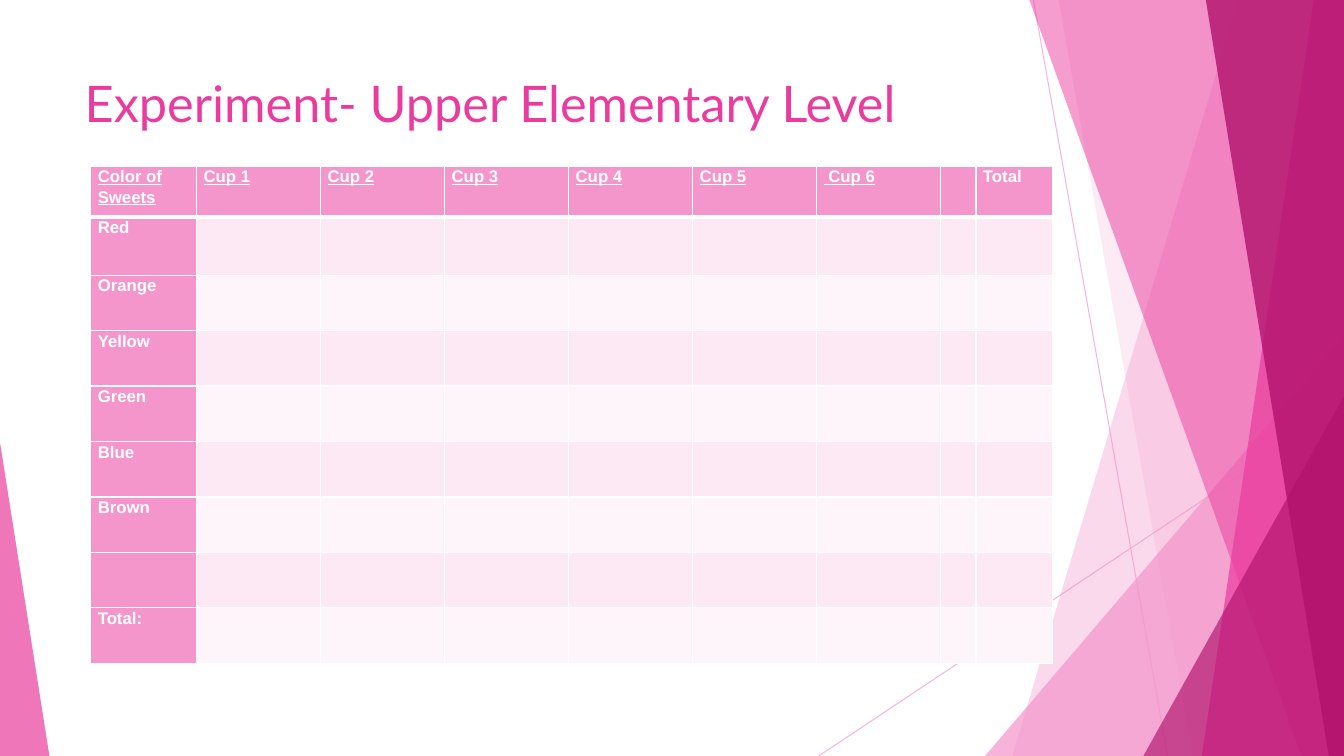
import lxml.etree
import pptx
import pptx.dml.color
import pptx.enum.shapes
import pptx.enum.text
import pptx.oxml.ns
import pptx.util

RGBColor = pptx.dml.color.RGBColor
WHITE = RGBColor(0xFF, 0xFF, 0xFF)
LIGHT_PINK = RGBColor(0xF4, 0x96, 0xCB)
PINK = RGBColor(0xEA, 0x3C, 0x9E)
MAGENTA = RGBColor(0xB2, 0x12, 0x6C)
BANDS = (RGBColor(0xFC, 0xE9, 0xF4), RGBColor(0xFE, 0xF5, 0xFA))

GRID_COLUMNS, GRID_ROWS = 13.33, 7.5

HEADINGS = ["Color of Sweets", "Cup 1", "Cup 2", "Cup 3", "Cup 4", "Cup 5", " Cup 6", "", "Total"]
COLORS = ["Red", "Orange", "Yellow", "Green", "Blue", "Brown", "", "Total:"]
COLUMN_WIDTHS = [1.05] + [1.23] * 6 + [0.35, 0.76]
ROW_HEIGHTS = [0.5, 0.58] + [0.55] * 7


def child(parent, tag, **attributes):
    return lxml.etree.SubElement(parent, pptx.oxml.ns.qn(tag), attributes)


def set_format(target, values):
    for name, value in values.items():
        setattr(target, name, value)


class SlideBuilder:
    """Draws styled elements on one slide, measured in grid columns and rows."""

    def __init__(self, presentation):
        self.column = presentation.slide_width / GRID_COLUMNS
        self.row = presentation.slide_height / GRID_ROWS
        self.slide = presentation.slides.add_slide(presentation.slide_layouts[5])
        self.shapes = self.slide.shapes
        self.title_font = {"name": "Lato", "size": pptx.util.Pt(36), "bold": False}
        self.cell_font = {"name": "Arial", "size": pptx.util.Pt(12), "bold": True}
        self.cell_format = {
            "margin_left": self.x(0.07), "margin_right": self.x(0.07),
            "margin_top": 0, "margin_bottom": 0,
            "vertical_anchor": pptx.enum.text.MSO_ANCHOR.TOP,
        }

    def x(self, columns):
        return round(columns * self.column)

    def y(self, rows):
        return round(rows * self.row)

    def box(self, left, top, width, height):
        return self.x(left), self.y(top), self.x(width), self.y(height)

    def set_opacity(self, shape, percent):
        for color in shape._element.spPr.iter(pptx.oxml.ns.qn("a:srgbClr")):
            child(color, "a:alpha", val=str(percent * 1000))

    def paint(self, shape, color, opacity):
        shape.shadow.inherit = False
        shape.fill.solid()
        shape.fill.fore_color.rgb = color
        shape.line.fill.background()
        self.set_opacity(shape, opacity)

    def line(self, start, end):
        connector = self.shapes.add_connector(
            pptx.enum.shapes.MSO_CONNECTOR.STRAIGHT,
            self.x(start[0]), self.y(start[1]), self.x(end[0]), self.y(end[1]))
        connector.line.color.rgb = LIGHT_PINK
        connector.line.width = pptx.util.Pt(0.75)
        self.set_opacity(connector, 70)
        child(connector._element.spPr, "a:effectLst")

    def edge_band(self, top_left, top_right, bottom_left, color, opacity):
        corners = [(top_left, 0), (top_right, 0), (GRID_COLUMNS, GRID_ROWS), (bottom_left, GRID_ROWS)]
        if top_right < GRID_COLUMNS:
            corners.insert(2, (GRID_COLUMNS, 0))
        points = [(self.x(column), self.y(row)) for column, row in corners]
        builder = self.shapes.build_freeform(*points[0])
        builder.add_line_segments(points[1:], close=True)
        self.paint(builder.convert_to_shape(), color, opacity)

    def corner_triangle(self, left, top, width, apex, color, opacity):
        shape = self.shapes.add_shape(
            pptx.enum.shapes.MSO_SHAPE.ISOSCELES_TRIANGLE,
            *self.box(left, top, width, GRID_ROWS - top))
        shape.adjustments[0] = apex
        self.paint(shape, color, opacity)

    def title(self, text, left, top, width, height):
        title = self.shapes.title
        position = self.box(left, top, width, height)
        set_format(title, dict(zip(("left", "top", "width", "height"), position)))
        set_format(title.text_frame, {
            "text": text, "word_wrap": True,
            "vertical_anchor": pptx.enum.text.MSO_ANCHOR.TOP,
            "auto_size": pptx.enum.text.MSO_AUTO_SIZE.NONE,
        })
        paragraph = title.text_frame.paragraphs[0]
        paragraph.alignment = pptx.enum.text.PP_ALIGN.LEFT
        set_format(paragraph.runs[0].font, self.title_font)
        paragraph.runs[0].font.color.rgb = PINK

    def border(self, cell, side, points):
        properties = cell._tc.get_or_add_tcPr()
        line = child(properties, f"a:ln{side}", w=str(pptx.util.Pt(points)))
        child(child(line, "a:solidFill"), "a:srgbClr", val=str(WHITE))

    def cell(self, cell, text, color, top, bottom, underline):
        for side, points in (("L", 1), ("R", 1), ("T", top), ("B", bottom)):
            self.border(cell, side, points)
        cell.fill.solid()
        cell.fill.fore_color.rgb = color
        set_format(cell, self.cell_format)
        paragraph = cell.text_frame.paragraphs[0]
        paragraph.line_spacing = 1.07
        set_format(paragraph.font, self.cell_font)
        if text:
            run = paragraph.add_run()
            run.text = text
            set_format(run.font, {**self.cell_font, "underline": underline})
            run.font.color.rgb = WHITE

    def table(self, left, top):
        frame = self.shapes.add_table(
            len(ROW_HEIGHTS), len(COLUMN_WIDTHS),
            *self.box(left, top, sum(COLUMN_WIDTHS), sum(ROW_HEIGHTS)))
        table = frame.table
        for column, width in zip(table.columns, COLUMN_WIDTHS):
            column.width = self.x(width)
        for row, height in zip(table.rows, ROW_HEIGHTS):
            row.height = self.y(height)
        contents = [HEADINGS] + [[color] + [""] * (len(HEADINGS) - 1) for color in COLORS]
        for i, texts in enumerate(contents):
            for j, text in enumerate(texts):
                color = LIGHT_PINK if i == 0 or j == 0 else BANDS[(i - 1) % 2]
                underline = i == 0 and text != "Total"
                self.cell(table.cell(i, j), text, color,
                          3 if i == 1 else 1, 3 if i == 0 else 1, underline)


def main():
    presentation = pptx.Presentation()
    presentation.slide_width = pptx.util.Inches(GRID_COLUMNS)
    presentation.slide_height = pptx.util.Inches(GRID_ROWS)
    builder = SlideBuilder(presentation)
    builder.line((10.25, 0), (11.58, 7.5))
    builder.line((13.33, 4.03), (8.12, 7.5))
    builder.edge_band(12.28, 13.33, 10.04, LIGHT_PINK, 36)
    builder.edge_band(10.5, 13.33, 11.83, LIGHT_PINK, 20)
    builder.corner_triangle(9.77, 3.33, 3.56, 1, LIGHT_PINK, 72)
    builder.edge_band(10.21, 13.33, 12.91, PINK, 50)
    builder.edge_band(13.03, 13.33, 11.92, PINK, 70)
    builder.edge_band(11.96, 13.33, 13.18, MAGENTA, 80)
    builder.corner_triangle(11.34, 3.93, 1.99, 1, MAGENTA, 66)
    builder.corner_triangle(0, 4.39, 0.49, 0, PINK, 70)
    builder.title("Experiment- Upper Elementary Level", 0.74, 0.67, 9.4, 1.44)
    builder.table(0.9, 1.65)
    presentation.save("out.pptx")


if __name__ == "__main__":
    main()
